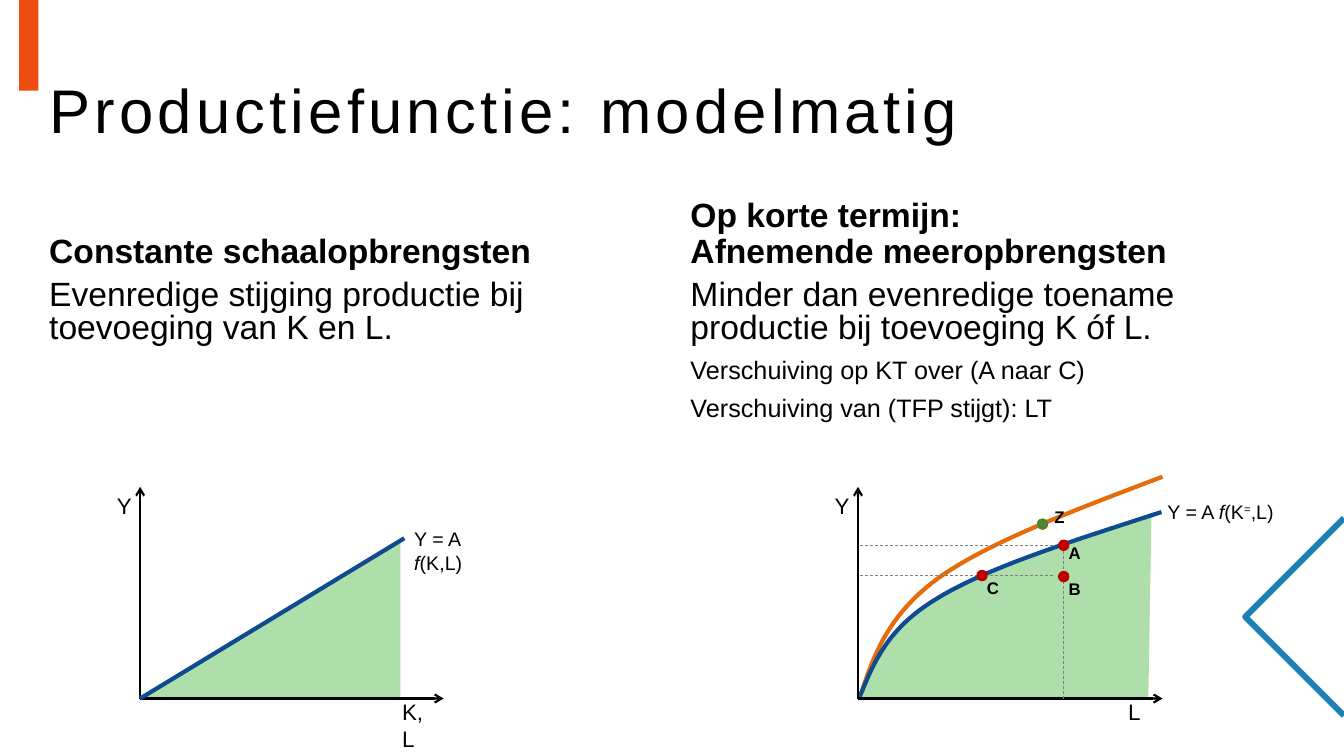
from collections import namedtuple
from dataclasses import dataclass

from pptx import Presentation
from pptx.dml.color import RGBColor
from pptx.enum.dml import MSO_LINE_DASH_STYLE as Dash
from pptx.enum.shapes import MSO_AUTO_SHAPE_TYPE as ShapeType
from pptx.enum.shapes import MSO_CONNECTOR_TYPE as ConnectorType
from pptx.enum.text import MSO_VERTICAL_ANCHOR as Anchor
from pptx.oxml.ns import qn
from pptx.util import Inches, Pt

Box = namedtuple("Box", "left top width height")


@dataclass(frozen=True)
class Theme:
    font: str = "Arial"
    text: str = "000000"
    accent: str = "ED4D0F"
    chevron: str = "1A80B6"
    area: str = "AEDEAA"
    curve: str = "0E4B91"
    shifted: str = "E46C0A"
    guide: str = "808080"
    point: str = "C00000"
    shifted_point: str = "548235"
    title_size: int = 44
    body_size: int = 24
    detail_size: int = 18
    axis_size: int = 16
    formula_size: int = 14
    point_size: int = 12


THEME = Theme()


def apply(target, values):
    for name, value in values.items():
        setattr(target, name, value)


def style_line(line, color, width):
    line.color.rgb = RGBColor.from_string(color)
    line.width = Pt(width)


def style_shape(shape, fill=None, line=None, width=1):
    shape.shadow.inherit = False
    if fill:
        shape.fill.solid()
        shape.fill.fore_color.rgb = RGBColor.from_string(fill)
    else:
        shape.fill.background()
    if line:
        style_line(shape.line, line, width)
    else:
        shape.line.fill.background()


def add_preset(slide, kind, box, **style):
    shape = slide.shapes.add_shape(kind, *map(Inches, box))
    style_shape(shape, **style)


def add_outline(slide, points, close=False, **style):
    points = [(Inches(x), Inches(y)) for x, y in points]
    builder = slide.shapes.build_freeform(*points[0], scale=1.0)
    builder.add_line_segments(points[1:], close=close)
    style_shape(builder.convert_to_shape(), **style)


def add_line(slide, start, end, color, width, dash=None, arrow=False):
    line = slide.shapes.add_connector(ConnectorType.STRAIGHT, *map(Inches, start + end))
    style_line(line.line, color, width)
    if dash:
        line.line.dash_style = dash
    properties = line._element.spPr
    if arrow:
        tail = properties.find(qn("a:ln")).makeelement(qn("a:tailEnd"), {"type": "arrow"})
        properties.find(qn("a:ln")).append(tail)
    properties.append(properties.makeelement(qn("a:effectLst"), {}))


def add_text(slide, box, paragraphs, anchor=Anchor.TOP, spacing=None, before=0):
    frame = slide.shapes.add_textbox(*map(Inches, box)).text_frame
    apply(frame, {"word_wrap": True, "vertical_anchor": anchor})
    for index, (runs, size) in enumerate(paragraphs):
        paragraph = frame.paragraphs[0] if index == 0 else frame.add_paragraph()
        apply(paragraph, {"line_spacing": spacing, "space_before": Pt(before)})
        for text, font, attributes in runs:
            for number, part in enumerate(text.split("\n")):
                if number:
                    paragraph.add_line_break()
                run = paragraph.add_run()
                run.text = part
                apply(run.font, {"name": THEME.font, "size": Pt(size), **font})
                run.font.color.rgb = RGBColor.from_string(THEME.text)
                for name, value in attributes.items():
                    run._r.get_or_add_rPr().set(name, value)


def plain(text, **font):
    return [(text, font, {})]


def bezier_points(points, steps=24):
    result = [points[0]]
    for first in range(0, len(points) - 1, 3):
        a, b, c, d = points[first:first + 4]
        for step in range(1, steps + 1):
            t = step / steps
            u = 1 - t
            result.append(tuple(
                u**3 * p + 3 * u * u * t * q + 3 * u * t * t * r + t**3 * s
                for p, q, r, s in zip(a, b, c, d)
            ))
    return result


def add_accents(slide, box):
    add_preset(slide, ShapeType.RECTANGLE, (box.left + 0.19, box.top, 0.19, 0.9), fill=THEME.accent)
    right, middle, reach = box.left + box.width, 6.12, 0.98
    chevron = [(right, middle - reach), (right - reach, middle), (right, middle + reach)]
    add_outline(slide, chevron, line=THEME.chevron, width=4.25)


def add_title(slide, box):
    runs = [("Productiefunctie: modelmatig", {}, {"spc": "300"})]
    add_text(slide, box, [(runs, THEME.title_size)], Anchor.MIDDLE, 0.9)


def add_column(slide, box, heading, body, details=()):
    heading_height = 0.9
    add_text(slide, box._replace(height=heading_height),
             [(plain(heading, bold=True), THEME.body_size)], Anchor.BOTTOM, 0.9, 10)
    paragraphs = [(plain(body), THEME.body_size)]
    paragraphs += [(plain(detail), THEME.detail_size) for detail in details]
    body_box = Box(box.left, box.top + heading_height, box.width, box.height - heading_height)
    add_text(slide, body_box, paragraphs, spacing=0.8, before=10)


def add_axes(slide, box, label, label_left, label_width):
    bottom = box.top + box.height
    origin = (box.left, bottom)
    for end in ((box.left, box.top), (box.left + box.width, bottom)):
        add_line(slide, origin, end, THEME.text, 1.5, arrow=True)
    add_text(slide, (box.left - 0.33, box.top, 0.31, 0.37), [(plain("Y"), THEME.axis_size)])
    add_text(slide, (box.left + label_left, bottom - 0.05, label_width, 0.37),
             [(plain(label), THEME.axis_size)])


def add_formula(slide, box, tail):
    runs = plain("Y = A ") + plain("f", italic=True) + tail
    add_text(slide, box, [(runs, THEME.formula_size)])


def add_constant_returns(slide, box):
    left, bottom = box.left, box.top + box.height
    add_outline(slide, [(left, bottom), (left + 2.58, bottom), (left + 2.58, bottom - 1.55)],
                close=True, fill=THEME.area)
    add_axes(slide, box, "K,L", 2.5, 0.47)
    add_formula(slide, (left + 2.62, box.top + 0.35, 1.05, 0.58), plain("(K,L)"))
    add_line(slide, (left, bottom), (left + 2.62, bottom - 1.59), THEME.curve, 3)


def add_diminishing_returns(slide, box):
    left, bottom = box.left, box.top + box.height

    def place(points):
        return [(left + x, bottom - y) for x, y in points]

    shifted = [(0.02, 0.01), (0.15, 0.42), (0.29, 0.82), (0.79, 1.19),
               (1.29, 1.55), (2.15, 1.87), (3.02, 2.2)]
    current = [(0.01, 0), (0.15, 0.34), (0.28, 0.69), (0.78, 0.99),
               (1.28, 1.3), (2.15, 1.57), (3.01, 1.85)]
    add_outline(slide, bezier_points(place(shifted)), line=THEME.shifted, width=3)
    add_outline(slide, place([(0, 0), (2.91, 1.8), (2.88, 0)]), close=True, fill=THEME.area)
    add_outline(slide, bezier_points(place(current)), fill=THEME.area, line=THEME.curve, width=3)
    add_axes(slide, box, "L", 2.58, 0.33)
    add_formula(slide, (left + 2.97, box.top + 0.08, 1.31, 0.34),
                plain("(K") + [("=", {}, {"baseline": "30000"})] + plain(",L)"))

    guides = [((0.02, 1.52), (1.94, 1.52)), ((0.02, 1.22), (1.93, 1.22)), ((2.04, 1.46), (2.04, 0))]
    for guide in guides:
        add_line(slide, *place(guide), THEME.guide, 0.5, dash=Dash.DASH)

    diameter = 0.1
    points = [
        ("Z", 1.83, 1.73, 0.02, -0.22, THEME.shifted_point),
        ("A", 2.04, 1.52, -0.05, -0.07, THEME.point),
        ("B", 2.04, 1.21, -0.05, -0.03, THEME.point),
        ("C", 1.23, 1.22, -0.05, -0.03, THEME.point),
    ]
    for name, x, y, label_x, label_y, color in points:
        center_x, center_y = place([(x, y)])[0]
        add_preset(slide, ShapeType.OVAL,
                   (center_x - diameter / 2, center_y - diameter / 2, diameter, diameter),
                   fill=color, line=color)
        add_text(slide, (center_x + label_x, center_y + label_y, 0.3, 0.3),
                 [(plain(name, bold=True), THEME.point_size)])


def main():
    presentation = Presentation()
    apply(presentation, {"slide_width": Inches(13.33), "slide_height": Inches(7.5)})
    slide = presentation.slides.add_slide(presentation.slide_layouts[6])
    add_accents(slide, Box(0, 0, 13.33, 7.5))
    add_title(slide, Box(0.39, 0.4, 12.56, 1.45))
    add_column(slide, Box(0.39, 1.84, 6.17, 1.91), "Constante schaalopbrengsten",
               "Evenredige stijging productie bij toevoeging van K en L.")
    add_column(slide, Box(6.75, 1.84, 6.19, 2.48), "Op korte termijn:\nAfnemende meeropbrengsten",
               "Minder dan evenredige toename productie bij toevoeging K óf L.",
               ("Verschuiving op KT over (A naar C)", "Verschuiving van (TFP stijgt): LT"))
    add_constant_returns(slide, Box(1.39, 4.83, 3.01, 2.1))
    add_diminishing_returns(slide, Box(8.51, 4.83, 3.02, 2.1))
    presentation.save("out.pptx")


if __name__ == "__main__":
    main()
